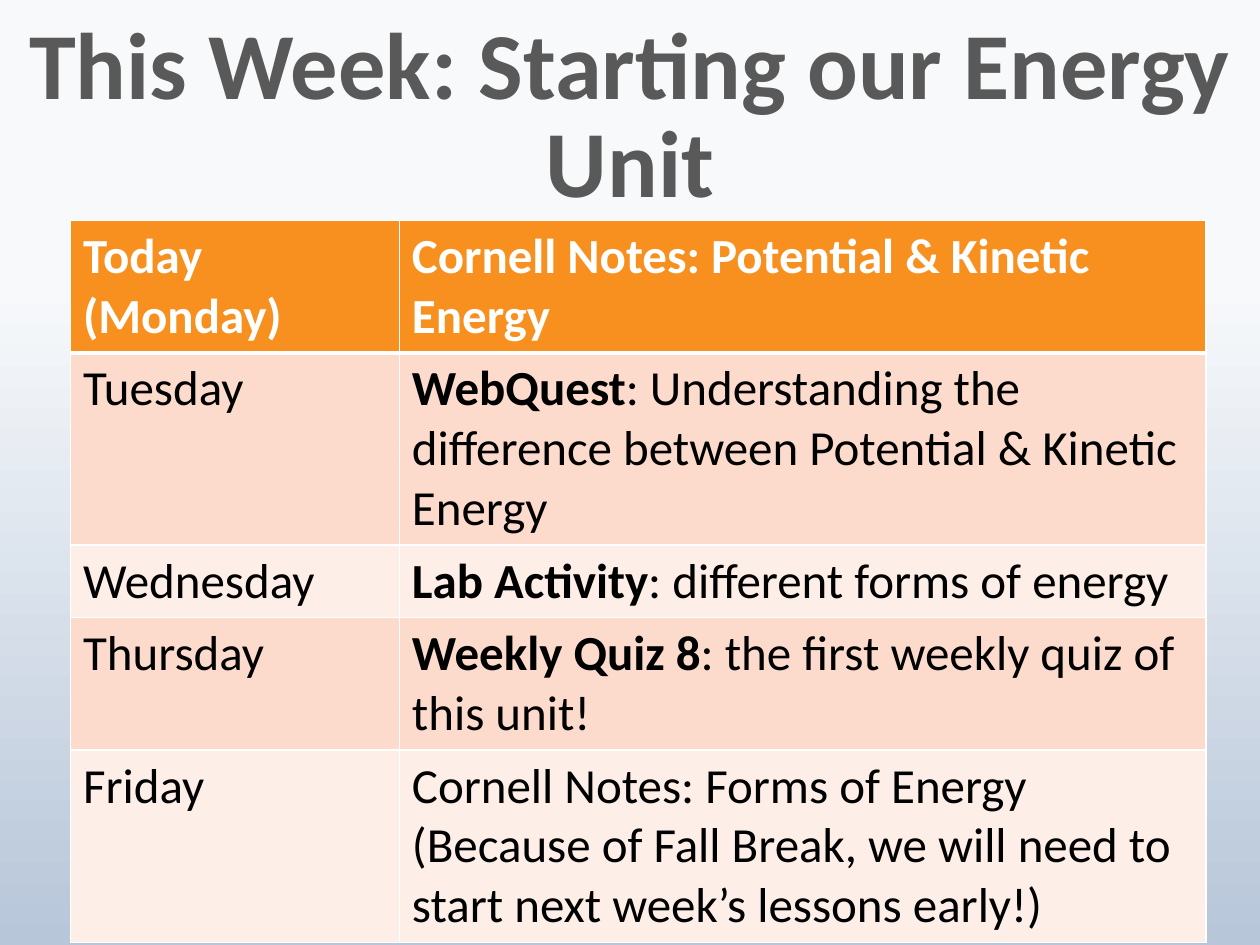
from dataclasses import dataclass

from lxml import etree
from pptx import Presentation
from pptx import util as u
from pptx.dml import color
from pptx.enum import text
from pptx.oxml import ns


@dataclass(frozen=True)
class Theme:
    font: str = "Calibri"
    title_size: int = 54
    title_leading: int = 56
    table_size: int = 28
    title_stops: tuple = ((0.5, "595959"), (1, "262626"))
    sky_stops: tuple = ((0.3, "F7F9FB"), (1, "B7C6D9"))
    header_fill: str = "F7901E"
    band_fills: tuple = ("FCDBCD", "FDEEE8")
    white: str = "FFFFFF"
    ink: str = "000000"


THEME = Theme()

SCHEDULE = [
    ("Today (Monday)", "Cornell Notes: Potential & Kinetic Energy", "", 2),
    ("Tuesday", "WebQuest",
     ": Understanding the difference between Potential & Kinetic Energy", 3),
    ("Wednesday", "Lab Activity", ": different forms of energy", 1),
    ("Thursday", "Weekly Quiz 8", ": the first weekly quiz of this unit!", 2),
    ("Friday", "", "Cornell Notes: Forms of Energy (Because of Fall Break, "
     "we will need to start next week’s lessons early!)", 3),
]


def rgb(value):
    return color.RGBColor.from_string(value)


def paint_gradient(fill, stops):
    fill.gradient()
    fill.gradient_angle = 270
    for stop, (position, value) in zip(fill.gradient_stops, stops):
        stop.position = position
        stop.color.rgb = rgb(value)


def write(paragraph, words, size=THEME.table_size, bold=False, ink=THEME.ink, stops=None):
    run = paragraph.add_run()
    run.text = words
    run.font.name = THEME.font
    run.font.size = u.Pt(size)
    run.font.bold = bold
    if stops:
        paint_gradient(run.font.fill, stops)
    else:
        run.font.color.rgb = rgb(ink)


def add_title(slide, words):
    title = slide.shapes.title
    title.left, title.top = u.Inches(0), u.Inches(0.25)
    title.width, title.height = u.Inches(10), u.Inches(1.38)
    frame = title.text_frame
    frame.word_wrap = True
    frame.auto_size = text.MSO_AUTO_SIZE.NONE
    frame.vertical_anchor = text.MSO_ANCHOR.MIDDLE
    heading = frame.paragraphs[0]
    heading.alignment = text.PP_ALIGN.CENTER
    heading.line_spacing = u.Pt(THEME.title_leading)
    write(heading, words, size=THEME.title_size, bold=True, stops=THEME.title_stops)


def style_cell(cell, fill, top=1, bottom=1):
    properties = cell._tc.get_or_add_tcPr()
    for side, points in (("L", 1), ("R", 1), ("T", top), ("B", bottom)):
        border = etree.SubElement(properties, ns.qn(f"a:ln{side}"), w=str(u.Pt(points)))
        paint = etree.SubElement(border, ns.qn("a:solidFill"))
        etree.SubElement(paint, ns.qn("a:srgbClr"), val=THEME.white)
    cell.fill.solid()
    cell.fill.fore_color.rgb = rgb(fill)


def add_schedule(slide):
    heights = [u.Inches(0.1 + 0.47 * lines) for *_, lines in SCHEDULE]
    widths = [u.Inches(2.61), u.Inches(6.4)]
    schedule = slide.shapes.add_table(
        len(SCHEDULE), len(widths), u.Inches(0.56), u.Inches(1.75),
        sum(widths), sum(heights)).table
    for column, width in zip(schedule.columns, widths):
        column.width = width
    for index, (day, topic, detail, _) in enumerate(SCHEDULE):
        schedule.rows[index].height = heights[index]
        header = index == 0
        fill = THEME.header_fill if header else THEME.band_fills[(index - 1) % 2]
        ink = THEME.white if header else THEME.ink
        day_cell, plan_cell = schedule.rows[index].cells
        for cell in (day_cell, plan_cell):
            style_cell(cell, fill, top=3 if index == 1 else 1, bottom=3 if header else 1)
        write(day_cell.text_frame.paragraphs[0], day, bold=header, ink=ink)
        plan = plan_cell.text_frame.paragraphs[0]
        for words, bold in ((topic, True), (detail, False)):
            if words:
                write(plan, words, bold=bold, ink=ink)


def main():
    deck = Presentation()
    deck.slide_width, deck.slide_height = u.Inches(10), u.Inches(7.5)
    slide = deck.slides.add_slide(deck.slide_layouts.get_by_name("Title Only"))
    paint_gradient(slide.background.fill, THEME.sky_stops)
    add_title(slide, "This Week: Starting our Energy Unit")
    add_schedule(slide)
    deck.save("out.pptx")


if __name__ == "__main__":
    main()
